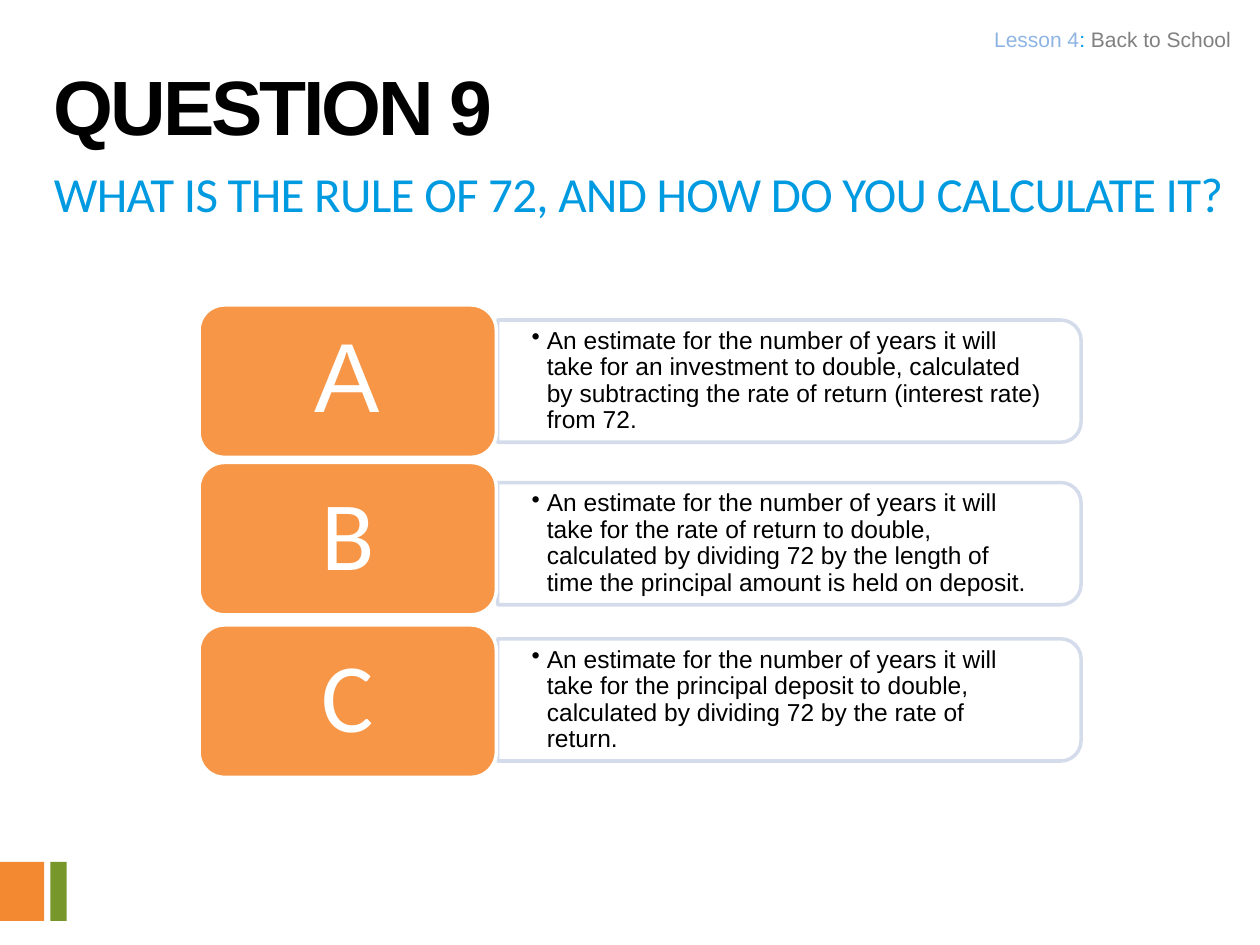
"""Build the quiz slide for question 9 on the Rule of 72."""
from lxml.etree import SubElement
from pptx import Presentation
from pptx.dml.color import RGBColor
from pptx.enum.shapes import MSO_SHAPE as SHAPE
from pptx.enum.text import MSO_ANCHOR as ANCHOR, PP_ALIGN as ALIGN
from pptx.oxml.ns import qn
from pptx.util import Inches, Pt

THEME = {
    "heading": "000000", "question": "009AE1", "lesson": "8EB4E3", "topic": "808080",
    "orange": "F38A31", "green": "77972B", "card": "F79646", "white": "FFFFFF",
    "outline": "D0D8E8", "heading_pt": 44, "question_pt": 28, "letter_pt": 56,
    "answer_pt": 14, "lesson_pt": 12, "sans": "Arial", "humanist": "Calibri",
}
ANSWERS = [
    ("A", "sans", 24.2, 25.4,
     "An estimate for the number of years it will take for an investment to double, "
     "calculated by subtracting the rate of return (interest rate) from 72."),
    ("B", "humanist", 36.7, 38.3,
     "An estimate for the number of years it will take for the rate of return to double, "
     "calculated by dividing 72 by the length of time the principal amount is held on deposit."),
    ("C", "humanist", 49.6, 50.7,
     "An estimate for the number of years it will take for the principal deposit to double, "
     "calculated by dividing 72 by the rate of return."),
]

prs = Presentation()
prs.slide_width, prs.slide_height = Inches(10), Inches(7.5)
s = prs.slides.add_slide(prs.slide_layouts[6])
COL, ROW = prs.slide_width / 100, prs.slide_height / 75


def add_block(kind, col, row, cols, rows, fill, line=None):
    sp = s.shapes.add_shape(kind, *map(int, (col * COL, row * ROW, cols * COL, rows * ROW)))
    sp.shadow.inherit = False
    sp.fill.solid()
    sp.fill.fore_color.rgb = RGBColor.from_string(THEME[fill])
    if line:
        sp.line.color.rgb = RGBColor.from_string(THEME[line])
        sp.line.width = Pt(2)
    else:
        sp.line.fill.background()
    return sp


def write(sp, parts, size, font, inset=(1, 0.5), anchor=ANCHOR.TOP, spacing=None):
    tf = sp.text_frame
    tf.word_wrap = True
    tf.vertical_anchor = anchor
    tf.margin_left = tf.margin_right = int(inset[0] * COL)
    tf.margin_top = tf.margin_bottom = int(inset[1] * ROW)
    p = tf.paragraphs[0]
    p.line_spacing = spacing
    for text, color in parts:
        r = p.add_run()
        r.text = text
        r.font.size = Pt(THEME[size])
        r.font.name = THEME[font]
        r.font.color.rgb = RGBColor.from_string(THEME[color])
    return p


add_block(SHAPE.RECTANGLE, 0, 68.4, 3.5, 4.7, "orange")
add_block(SHAPE.RECTANGLE, 4, 68.4, 1.3, 4.7, "green")

question = s.shapes.add_textbox(*map(int, (3.3 * COL, 12.5 * ROW, 95 * COL, 10 * ROW)))
p = write(question, [("WHAT IS THE RULE OF 72, AND HOW DO YOU CALCULATE IT?", "question")],
          "question_pt", "humanist")
p.runs[0].font._element.set("spc", "-40")

for letter, font, card_row, panel_row, answer in ANSWERS:
    panel_cols, panel_rows = 46.3, 9.7
    panel = add_block(SHAPE.ROUND_2_SAME_RECTANGLE, 62.65 - panel_rows / 2,
                      panel_row + (panel_rows - panel_cols) / 2,
                      panel_rows, panel_cols, "white", "outline")
    panel.rotation = 90
    for color in panel._element.spPr.iter(qn("a:srgbClr")):
        SubElement(color, qn("a:alpha"), val="90000")

    box = s.shapes.add_textbox(
        *map(int, (39.5 * COL, (panel_row + 0.5) * ROW, 45.9 * COL, 8.7 * ROW)))
    p = write(box, [(answer, "heading")], "answer_pt", "sans", (2.7, 1.4), ANCHOR.MIDDLE, 0.9)
    pPr = p._p.get_or_add_pPr()
    pPr.set("marL", str(Inches(0.12)))
    pPr.set("indent", str(-Inches(0.12)))
    SubElement(pPr, qn("a:buChar"), char="•")

    card = add_block(SHAPE.ROUNDED_RECTANGLE, 15.8, card_row, 23.6, 12.1, "card", "white")
    p = write(card, [(letter, "white")], "letter_pt", font, (2.3, 1.2), ANCHOR.MIDDLE, 0.9)
    p.alignment = ALIGN.CENTER

lesson = s.shapes.add_textbox(*map(int, (40 * COL, 1.7 * ROW, 58.5 * COL, 3.2 * ROW)))
p = write(lesson, [("Lesson 4", "lesson"), (": ", "question"), ("Back to School", "topic")],
          "lesson_pt", "sans", (0.8, 0.4))
p.alignment = ALIGN.RIGHT

heading = s.shapes.add_textbox(*map(int, (3.3 * COL, 3.3 * ROW, 86.6 * COL, 8.3 * ROW)))
p = write(heading, [("QUESTION 9", "heading")], "heading_pt", "sans", spacing=Pt(59))
p.runs[0].font.bold = True
p.runs[0].font._element.set("spc", "-180")

prs.save("out.pptx")
